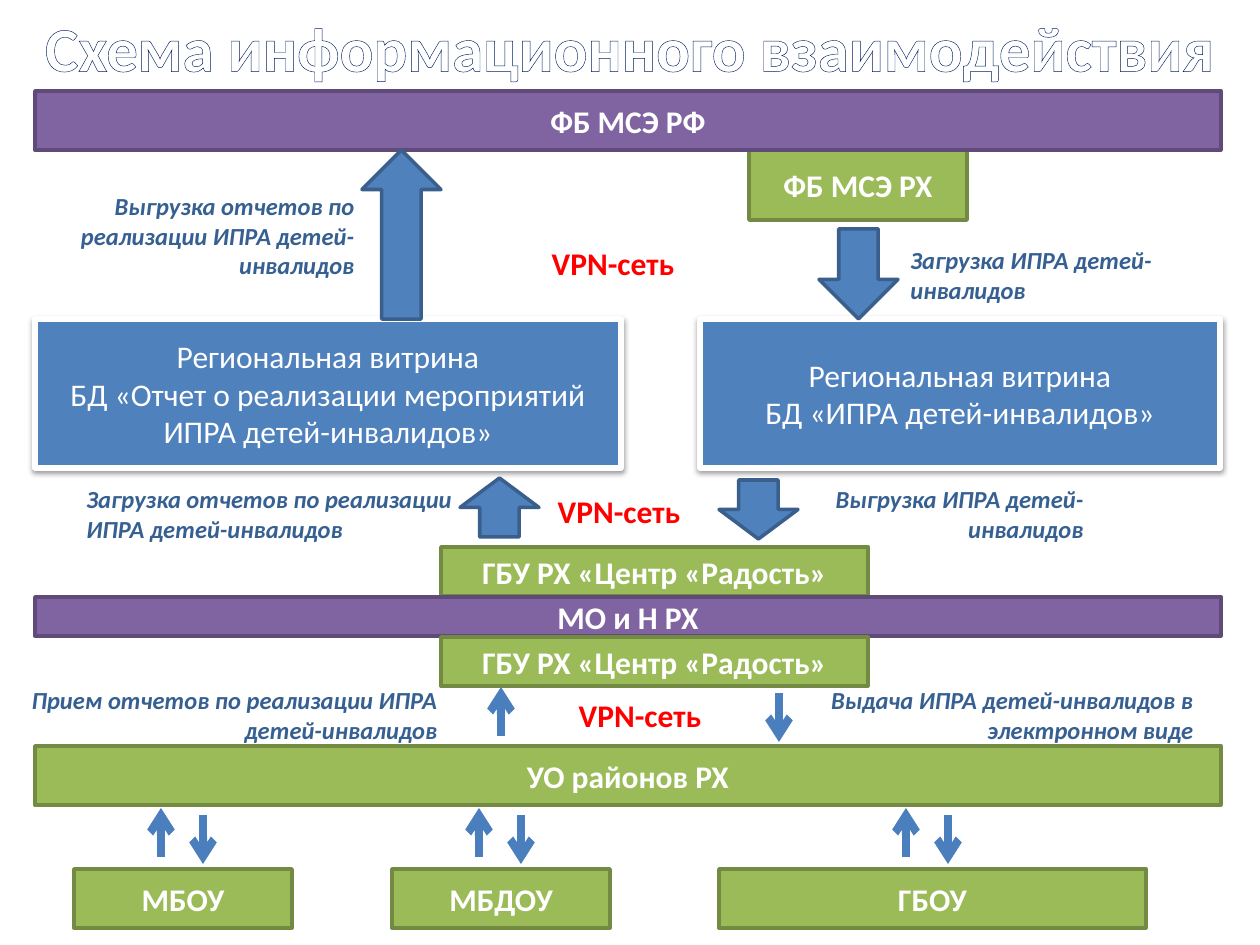
from lxml import etree
from pptx import Presentation
from pptx.dml.color import RGBColor
from pptx.enum.shapes import MSO_CONNECTOR, MSO_SHAPE
from pptx.enum.text import MSO_ANCHOR as ANCHOR, MSO_AUTO_SIZE as AUTO_SIZE, PP_ALIGN as ALIGN
from pptx.oxml import parse_xml
from pptx.oxml.ns import nsdecls, qn
from pptx.util import Pt

PX = 914400 / 126
WHITE = RGBColor(0xFF, 0xFF, 0xFF)
RED = RGBColor(0xFF, 0x00, 0x00)
LABEL_BLUE = RGBColor(0x37, 0x60, 0x92)
LINE_BLUE = RGBColor(0x4B, 0x7E, 0xBC)
BLUE = RGBColor(0x4F, 0x81, 0xBD)
BLUE_EDGE = RGBColor(0x3A, 0x5F, 0x8C)
GREEN = RGBColor(0x9B, 0xBB, 0x59)
GREEN_EDGE = RGBColor(0x73, 0x8A, 0x42)
PURPLE = RGBColor(0x80, 0x64, 0xA2)
PURPLE_EDGE = RGBColor(0x5F, 0x4A, 0x78)

SHADOW = f"""<a:effectLst {nsdecls('a')}>
  <a:outerShdw blurRad="40000" dist="20000" dir="5400000" rotWithShape="0">
    <a:srgbClr val="000000"><a:alpha val="38000"/></a:srgbClr>
  </a:outerShdw>
</a:effectLst>"""
TITLE_OUTLINE = f"""<a:ln {nsdecls('a')} w="28575">
  <a:solidFill><a:srgbClr val="002060"/></a:solidFill>
</a:ln>"""


def emu(*pixels):
    return [round(value * PX) for value in pixels]


def write(shape, text, size=18, color=WHITE, bold=True, italic=False,
          align=ALIGN.CENTER, anchor=ANCHOR.MIDDLE, grow=False):
    frame = shape.text_frame
    frame.text = text
    frame.word_wrap = True
    frame.vertical_anchor = anchor
    if grow:
        frame.auto_size = AUTO_SIZE.SHAPE_TO_FIT_TEXT
    for paragraph in frame.paragraphs:
        paragraph.alignment = align
        for run in paragraph.runs:
            font = run.font
            font.name = "Calibri"
            font.size = Pt(size)
            font.bold = bold
            font.italic = italic
            font.color.rgb = color


prs = Presentation()
prs.slide_width, prs.slide_height = emu(1260, 945)
slide = prs.slides.add_slide(prs.slide_layouts[6])
shapes = slide.shapes

# Organisations and databases, from back to front
green = (GREEN, GREEN_EDGE, 2)
purple = (PURPLE, PURPLE_EDGE, 2)
database = (BLUE, WHITE, 3)
REPORTS = "Региональная витрина\nБД «Отчет о реализации мероприятий ИПРА детей-инвалидов»"
CENTRE = "ГБУ РХ «Центр «Радость»"
blocks = [
    ("ФБ МСЭ РХ", (749, 150, 218, 70), green),
    ("Региональная витрина\nБД «ИПРА детей-инвалидов»", (700, 319, 520, 149), database),
    (REPORTS, (35, 319, 586, 149), database),
    ("ФБ МСЭ РФ", (35, 91, 1186, 59), purple),
    (CENTRE, (441, 547, 427, 49), green),
    ("МО и Н РХ", (35, 597, 1186, 39), purple),
    (CENTRE, (441, 637, 427, 49), green),
    ("УО районов РХ", (35, 746, 1186, 59), green),
    ("МБОУ", (74, 869, 218, 59), green),
    ("МБДОУ", (392, 869, 218, 59), green),
    ("ГБОУ", (719, 869, 427, 59), green),
]
for text, place, (fill, edge, weight) in blocks:
    block = shapes.add_shape(MSO_SHAPE.RECTANGLE, *emu(*place))
    block.fill.solid()
    block.fill.fore_color.rgb = fill
    block.line.color.rgb = edge
    block.line.width = Pt(weight)
    if fill == BLUE:
        block._element.spPr.append(parse_xml(SHADOW))
    else:
        block.shadow.inherit = False
    write(block, text, bold=fill != BLUE)

# Wide arrows to and from the databases
for kind, left, top, height in [
    (MSO_SHAPE.DOWN_ARROW, 819, 229, 90),
    (MSO_SHAPE.UP_ARROW, 362, 150, 169),
    (MSO_SHAPE.DOWN_ARROW, 719, 480, 59),
    (MSO_SHAPE.UP_ARROW, 460, 478, 59),
]:
    arrow = shapes.add_shape(kind, *emu(left, top, 79, height))
    arrow.shadow.inherit = False
    arrow.fill.solid()
    arrow.fill.fore_color.rgb = BLUE
    arrow.line.color.rgb = BLUE_EDGE
    arrow.line.width = Pt(2)

# Thin arrows: one exchange with the centre, then a pair above each school type
flows = [(779, 693, 742), (501, 736, 687)]
for x in (161, 479, 906):
    flows += [(x, 857, 808), (x + 42, 815, 864)]
for x, start, end in flows:
    flow = shapes.add_connector(MSO_CONNECTOR.STRAIGHT, *emu(x, start, x, end))
    flow.line.color.rgb = LINE_BLUE
    flow.line.width = Pt(4.5)
    etree.SubElement(flow.line._get_or_add_ln(), qn("a:tailEnd"), type="arrow")
    etree.SubElement(flow._element.spPr, qn("a:effectLst"))

for text, place, align in [
    ("Загрузка ИПРА детей-инвалидов", (898, 239, 328, 72), ALIGN.LEFT),
    ("Выгрузка отчетов по реализации ИПРА детей-инвалидов", (0, 185, 367, 102), ALIGN.RIGHT),
    ("Выгрузка ИПРА детей-инвалидов", (789, 478, 307, 72), ALIGN.RIGHT),
    ("Загрузка отчетов по реализации ИПРА детей-инвалидов", (74, 478, 407, 72), ALIGN.LEFT),
    ("Выдача ИПРА детей-инвалидов в электронном виде", (740, 679, 466, 72), ALIGN.RIGHT),
    ("Прием отчетов по реализации ИПРА детей-инвалидов", (15, 679, 435, 72), ALIGN.RIGHT),
]:
    write(shapes.add_textbox(*emu(*place)), text, size=14, color=LABEL_BLUE,
          italic=True, align=align, anchor=ANCHOR.TOP, grow=True)

for left, top in [(514, 238), (520, 486), (541, 690)]:
    write(shapes.add_textbox(*emu(left, top, 198, 50)), "VPN-сеть",
          color=RED, anchor=ANCHOR.TOP, grow=True)

title = shapes.add_textbox(*emu(25, -16, 1210, 125))
write(title, "Схема информационного взаимодействия", size=36)
title_run = title.text_frame.paragraphs[0].runs[0]
title_run.font._element.insert(0, parse_xml(TITLE_OUTLINE))

prs.save("out.pptx")
